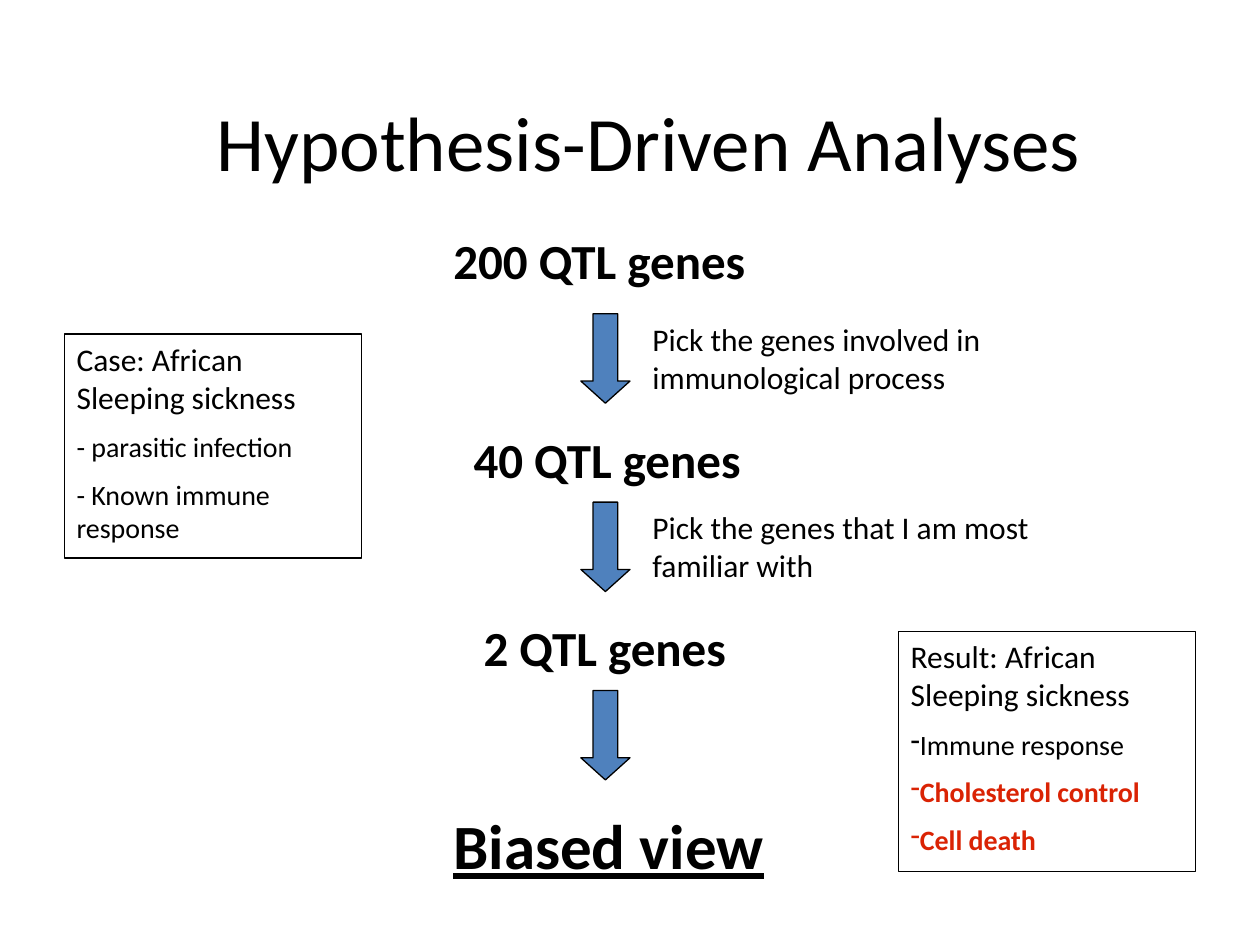
from pptx import Presentation
from pptx.dml.color import RGBColor
from pptx.enum.shapes import MSO_SHAPE
from pptx.enum.text import MSO_ANCHOR, PP_ALIGN
from pptx.util import Inches, Pt
from lxml import etree

RECT = MSO_SHAPE.RECTANGLE
ARROW = MSO_SHAPE.DOWN_ARROW
TOP = MSO_ANCHOR.TOP
MIDDLE = MSO_ANCHOR.MIDDLE
LEFT = PP_ALIGN.LEFT
CENTER = PP_ALIGN.CENTER

BLACK = RGBColor(0x00, 0x00, 0x00)
WHITE = RGBColor(0xFF, 0xFF, 0xFF)
BLUE = RGBColor(0x4F, 0x81, 0xBD)
RED = RGBColor(0xDA, 0x23, 0x04)

FONT = "Calibri"
NS = "http://schemas.openxmlformats.org/drawingml/2006/main"
START = 2.49
PITCH = 1.495


def add_run(para, text, size, color=BLACK, bold=False, line=False):
    run = para.add_run()
    run.text = text
    font = run.font
    font.name = FONT
    font.size = Pt(size)
    font.bold = bold
    font.underline = line
    font.color.rgb = color


def add_dash(para):
    props = para._p.get_or_add_pPr()
    props.set("marL", "0")
    props.set("indent", "0")
    etree.SubElement(props, f"{{{NS}}}buChar", char="-")


def add_label(slide, box, text, size, bold=False, line=False,
              align=LEFT, anchor=TOP):
    shape = slide.shapes.add_textbox(*map(Inches, box))
    frame = shape.text_frame
    frame.word_wrap = True
    frame.vertical_anchor = anchor
    para = frame.paragraphs[0]
    para.alignment = align
    add_run(para, text, size, bold=bold, line=line)


def add_block(slide, kind, box, fill):
    shape = slide.shapes.add_shape(kind, *map(Inches, box))
    shape.shadow.inherit = False
    shape.fill.solid()
    shape.fill.fore_color.rgb = fill
    shape.line.color.rgb = BLACK
    shape.line.width = Pt(0.75)
    return shape


def add_arrow(slide, top):
    shape = add_block(slide, ARROW, (4.61, top, 0.39, 0.71), BLUE)
    shape.adjustments[0] = 0.5
    shape.adjustments[1] = 0.45


def add_card(slide, box, head, items, dash=False):
    frame = add_block(slide, RECT, box, WHITE).text_frame
    frame.word_wrap = True
    frame.vertical_anchor = TOP
    para = frame.paragraphs[0]
    para.alignment = LEFT
    add_run(para, head, 18)
    for text, color, bold in items:
        para = frame.add_paragraph()
        para.alignment = LEFT
        para.space_before = Pt(8)
        if dash:
            add_dash(para)
        add_run(para, text, 16, color, bold)


def main():
    deck = Presentation()
    deck.slide_width = Inches(10)
    deck.slide_height = Inches(7.5)
    slide = deck.slides.add_slide(deck.slide_layouts[6])

    add_label(slide, (0.9, 0.68, 8.5, 0.87), "Hypothesis-Driven Analyses", 44,
              align=CENTER, anchor=MIDDLE)

    steps = [
        (3.5, 1.78, "200 QTL genes",
         "Pick the genes involved in immunological process"),
        (3.66, 3.36, "40 QTL genes",
         "Pick the genes that I am most familiar with"),
        (3.74, 4.85, "2 QTL genes", None),
    ]
    for i, (left, top, count, note) in enumerate(steps):
        mid = START + i * PITCH
        add_label(slide, (left, top, 2.99, 0.57), count, 28, bold=True)
        add_arrow(slide, mid)
        if note:
            add_label(slide, (5.08, mid, 3.55, 0.7), note, 18)
    add_label(slide, (3.5, 6.35, 3.23, 0.7), "Biased view", 36,
              bold=True, line=True)

    add_card(slide, (0.51, 2.65, 2.36, 1.78), "Case: African Sleeping sickness", [
        ("- parasitic infection", BLACK, False),
        ("- Known immune response", BLACK, False),
    ])
    add_card(slide, (7.13, 5.01, 2.36, 1.91), "Result: African Sleeping sickness", [
        ("Immune response", BLACK, False),
        ("Cholesterol control", RED, True),
        ("Cell death", RED, True),
    ], dash=True)

    deck.save("out.pptx")


if __name__ == "__main__":
    main()
